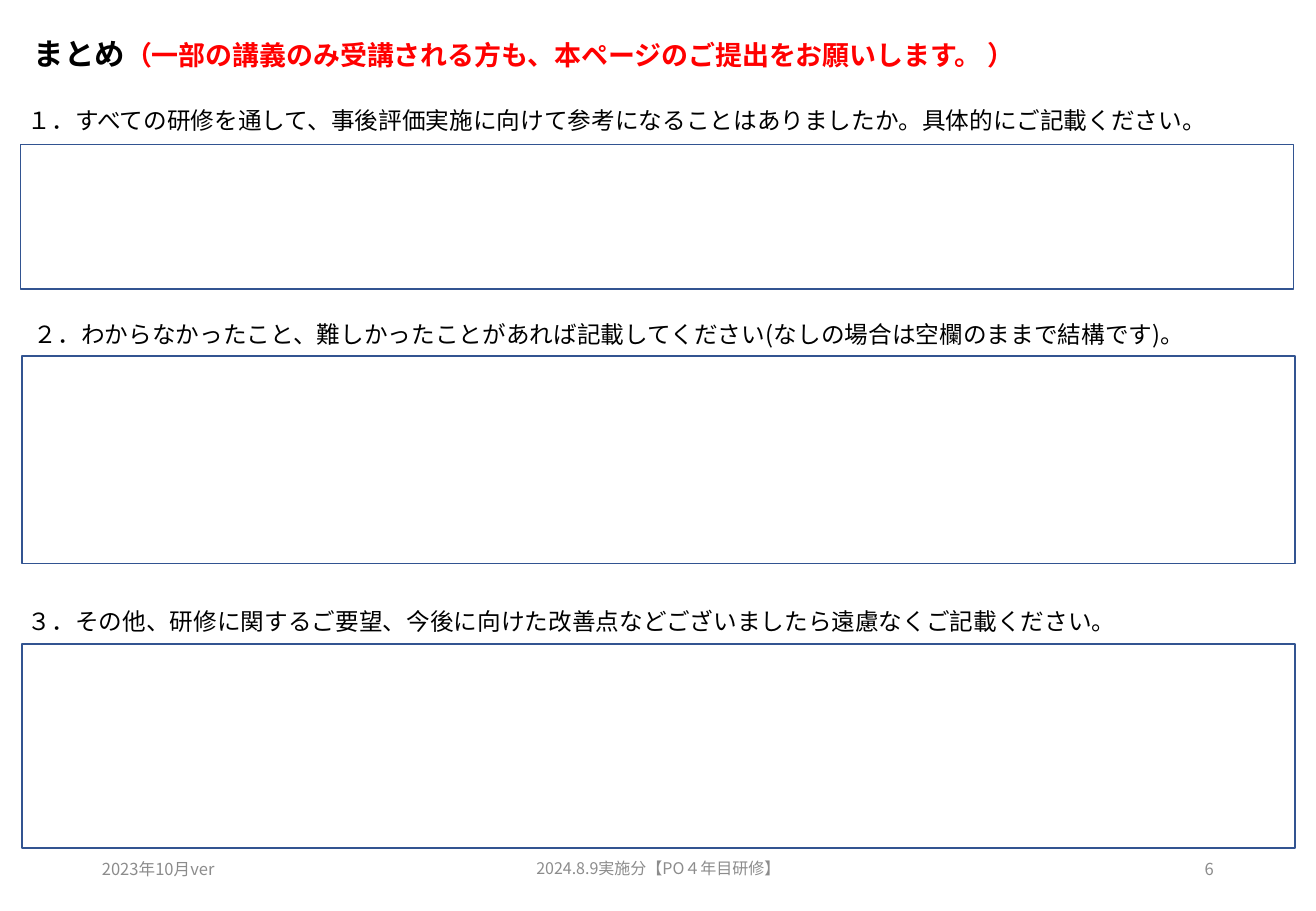
import pptx
import pptx.dml.color
import pptx.enum.shapes
import pptx.enum.text
import pptx.oxml
import pptx.oxml.ns
import pptx.util

Pt = pptx.util.Pt
Align = pptx.enum.text.PP_ALIGN
Anchor = pptx.enum.text.MSO_ANCHOR

BLACK = pptx.dml.color.RGBColor(0x00, 0x00, 0x00)
RED = pptx.dml.color.RGBColor(0xFF, 0x00, 0x00)
GREY = pptx.dml.color.RGBColor(0x8C, 0x8C, 0x8C)
WHITE = pptx.dml.color.RGBColor(0xFF, 0xFF, 0xFF)
BLUE = pptx.dml.color.RGBColor(0x32, 0x54, 0x91)

FONT = "Noto Sans CJK JP"
ANSWER_WIDTH = 754.5
QUESTION_HEIGHT = 24.5

QUESTIONS = [
    ("１．すべての研修を通して、事後評価実施に向けて参考になることはありましたか。具体的にご記載ください。",
     (12.2, 85.7, ANSWER_WIDTH, 85.7), (-2.8, -26.6)),
    ("２．わからなかったこと、難しかったことがあれば記載してください(なしの場合は空欄のままで結構です)。",
     (13, 211, ANSWER_WIDTH, 123), (0, -25.2)),
    ("３．その他、研修に関するご要望、今後に向けた改善点などございましたら遠慮なくご記載ください。",
     (13, 381.6, ANSWER_WIDTH, 121), (-3.6, -25.2)),
]

FOOTER_PARTS = [
    ("2023年10月ver", 0, 175.7, 9.8, Align.LEFT),
    ("2024.8.9実施分【PO４年目研修】", 205.2, 263.5, 9.5, Align.CENTER),
    ("6", 497.5, 175.7, 9.8, Align.RIGHT),
]


def add_text(slide, box, pieces, anchor=Anchor.TOP, align=Align.LEFT, bold=False):
    frame = slide.shapes.add_textbox(*map(Pt, box)).text_frame
    frame.word_wrap = True
    frame.vertical_anchor = anchor
    paragraph = frame.paragraphs[0]
    paragraph.alignment = align
    paragraph.font.name = FONT
    paragraph.font.bold = bold
    for text, size, color in pieces:
        run = paragraph.add_run()
        run.text = text
        run.font.size = Pt(size)
        run.font.color.rgb = color
        east_asian = pptx.oxml.parse_xml(
            f'<a:ea {pptx.oxml.ns.nsdecls("a")} typeface="{FONT}"/>')
        run.font._element.append(east_asian)
    return paragraph


def add_heading(slide, box):
    heading = add_text(slide, box, [
        ("まとめ", 18, BLACK),
        ("（一部の講義のみ受講される方も、本ページのご提出をお願いします。 ）", 16, RED),
    ], Anchor.MIDDLE, bold=True)
    heading.line_spacing = 0.9


def add_question(slide, box, question, offset):
    left, top, width, height = box
    answer = slide.shapes.add_shape(
        pptx.enum.shapes.MSO_SHAPE.RECTANGLE, *map(Pt, box))
    answer.shadow.inherit = False
    answer.fill.solid()
    answer.fill.fore_color.rgb = WHITE
    answer.line.color.rgb = BLUE
    answer.line.width = Pt(1)
    across, down = offset
    add_text(slide, (left + across, top + down, width, QUESTION_HEIGHT),
             [(question, 14, BLACK)])


def add_footer(slide, box):
    left, top, width, height = box
    for text, across, part_width, size, align in FOOTER_PARTS:
        add_text(slide, (left + across, top, part_width, height),
                 [(text, size, GREY)], Anchor.MIDDLE, align)


def main():
    deck = pptx.Presentation()
    deck.slide_width = Pt(780)
    deck.slide_height = Pt(540)
    slide = deck.slides.add_slide(deck.slide_layouts[6])
    add_heading(slide, (13, -2.9, 714.2, 71.3))
    for question, box, offset in QUESTIONS:
        add_question(slide, box, question, offset)
    add_footer(slide, (53.3, 500.4, 673.2, 28.8))
    deck.save("out.pptx")


if __name__ == "__main__":
    main()
